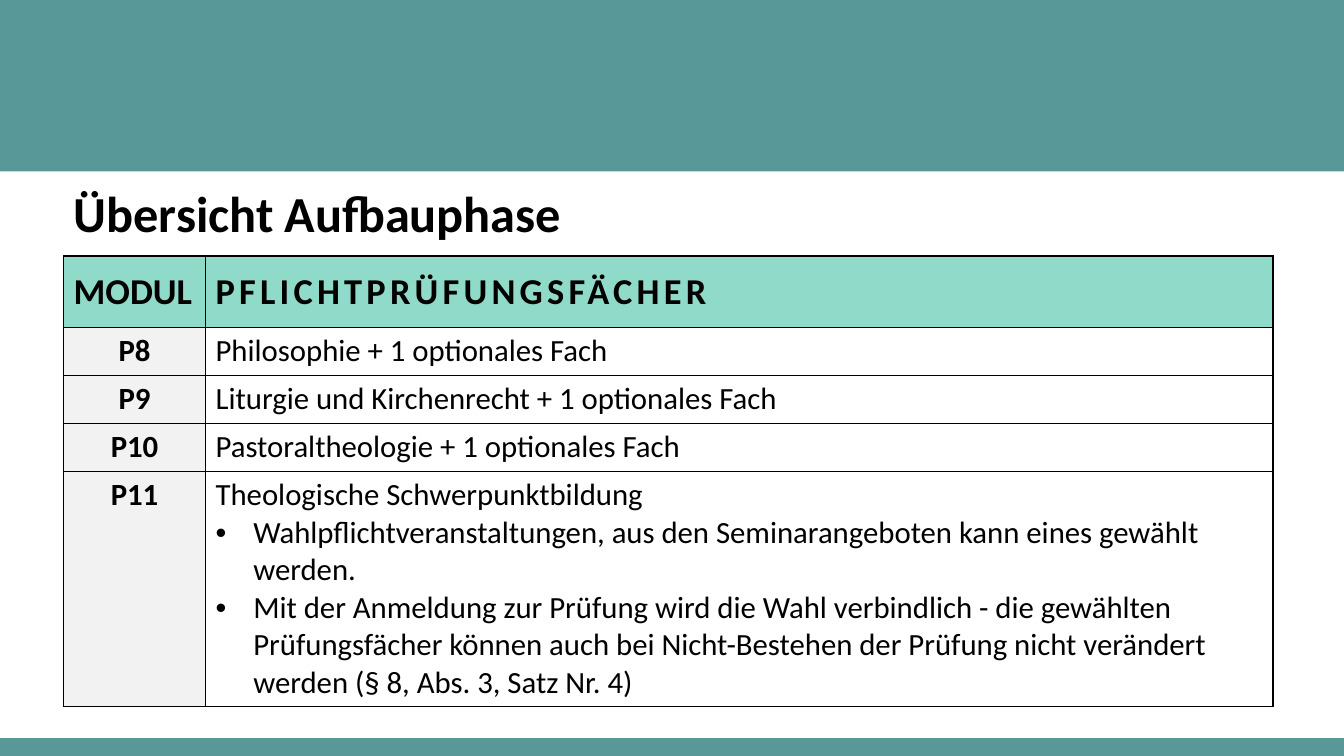
import pptx
import pptx.util
import pptx.dml.color
import pptx.enum.shapes
import pptx.enum.text
import pptx.oxml
import pptx.oxml.ns
from lxml import etree

Cm = pptx.util.Cm
Pt = pptx.util.Pt
COLORS = {"band": "589898", "header": "8FDAC8", "module": "F2F2F2",
          "subject": "FFFFFF", "text": "000000", "border": "000000"}


def rgb(name):
    return pptx.dml.color.RGBColor.from_string(COLORS[name])


def add_borders(cell):
    properties = cell._tc.get_or_add_tcPr()
    for position, side in enumerate(("lnL", "lnR", "lnT", "lnB")):
        line = etree.Element(pptx.oxml.ns.qn("a:" + side), w=str(Pt(1)))
        fill = etree.SubElement(line, pptx.oxml.ns.qn("a:solidFill"))
        etree.SubElement(fill, pptx.oxml.ns.qn("a:srgbClr"), val=COLORS["border"])
        properties.insert(position, line)


presentation = pptx.Presentation()
presentation.slide_width = Cm(33.87)
presentation.slide_height = Cm(19.05)
slide = presentation.slides.add_slide(presentation.slide_layouts[5])

for top, height in ((0, 4.32), (18.6, 0.45)):
    band = slide.shapes.add_shape(
        pptx.enum.shapes.MSO_SHAPE.RECTANGLE, 0, Cm(top), presentation.slide_width, Cm(height))
    band.shadow.inherit = False
    band.fill.solid()
    band.fill.fore_color.rgb = rgb("band")
    band.line.fill.background()

heading = slide.shapes.title
heading.left, heading.top, heading.width, heading.height = Cm(1.6), Cm(4.47), Cm(30.48), Cm(1.9)
heading.text_frame.text = "Übersicht Aufbauphase"
heading.text_frame.vertical_anchor = pptx.enum.text.MSO_ANCHOR.TOP
heading.text_frame.paragraphs[0].alignment = pptx.enum.text.PP_ALIGN.LEFT
heading_font = heading.text_frame.paragraphs[0].runs[0].font
heading_font.name = "Calibri"
heading_font.size = Pt(36)
heading_font.bold = True
heading_font.color.rgb = rgb("text")

modules = [
    ("MODUL", ["PFLICHTPRÜFUNGSFÄCHER"]),
    ("P8", ["Philosophie + 1 optionales Fach"]),
    ("P9", ["Liturgie und Kirchenrecht + 1 optionales Fach"]),
    ("P10", ["Pastoraltheologie + 1 optionales Fach"]),
    ("P11", [
        "Theologische Schwerpunktbildung",
        "Wahlpflichtveranstaltungen, aus den Seminarangeboten kann eines gewählt werden.",
        "Mit der Anmeldung zur Prüfung wird die Wahl verbindlich - die gewählten "
        "Prüfungsfächer können auch bei Nicht-Bestehen der Prüfung nicht verändert "
        "werden (§ 8, Abs. 3, Satz Nr. 4)",
    ]),
]
row_heights = [1.8, 1.21, 1.21, 1.21, 5.92]
overview = slide.shapes.add_table(
    len(modules), 2, Cm(1.6), Cm(6.45), Cm(30.48), Cm(sum(row_heights))).table
overview.columns[0].width = Cm(3.58)
overview.columns[1].width = Cm(26.9)

for row, (module, subjects) in enumerate(modules):
    overview.rows[row].height = Cm(row_heights[row])
    is_header = row == 0
    for column, lines in enumerate(([module], subjects)):
        is_module = column == 0
        cell = overview.cell(row, column)
        cell.text_frame.text = "\n".join(lines)
        cell.fill.solid()
        cell.fill.fore_color.rgb = rgb(
            "header" if is_header else "module" if is_module else "subject")
        add_borders(cell)
        if is_header:
            cell.vertical_anchor = pptx.enum.text.MSO_ANCHOR.MIDDLE
        for number, paragraph in enumerate(cell.text_frame.paragraphs):
            if number > 0:
                paragraph_properties = paragraph._p.get_or_add_pPr()
                paragraph_properties.set("marL", str(Cm(0.95)))
                paragraph_properties.set("indent", str(-Cm(0.95)))
                etree.SubElement(paragraph_properties, pptx.oxml.ns.qn("a:buFont"), typeface="Arial")
                etree.SubElement(paragraph_properties, pptx.oxml.ns.qn("a:buChar"), char="•")
            if is_module and not is_header:
                paragraph.alignment = pptx.enum.text.PP_ALIGN.CENTER
            run = paragraph.runs[0]
            run.font.name = "Calibri"
            run.font.size = Pt(26 if is_header else 22)
            run.font.bold = is_header or is_module
            run.font.color.rgb = rgb("text")
            if is_header and not is_module:
                run._r.get_or_add_rPr().set("spc", "300")

presentation.save("out.pptx")
